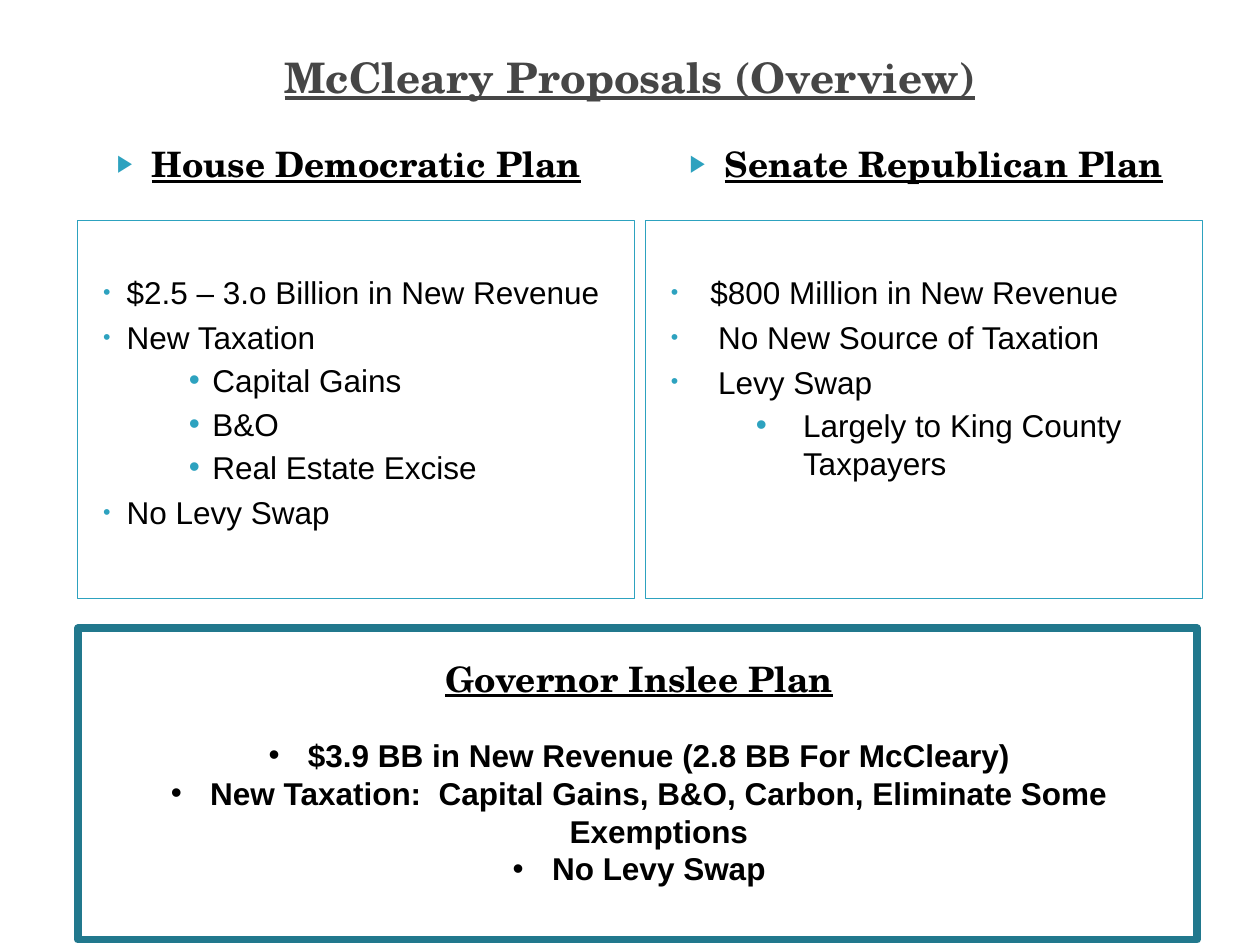
from lxml import etree
from pptx import Presentation
from pptx.dml.color import RGBColor
from pptx.enum.shapes import MSO_SHAPE
from pptx.enum.text import MSO_ANCHOR, PP_ALIGN
from pptx.oxml.ns import qn
from pptx.util import Pt

RECT = MSO_SHAPE.RECTANGLE
TOP, MIDDLE = MSO_ANCHOR.TOP, MSO_ANCHOR.MIDDLE
LEFT, CENTER = PP_ALIGN.LEFT, PP_ALIGN.CENTER

BLACK = RGBColor(0x00, 0x00, 0x00)
GRAY = RGBColor(0x46, 0x46, 0x46)
AQUA = RGBColor(0x2D, 0xA2, 0xBF)
TEAL = RGBColor(0x21, 0x78, 0x8D)
SERIF, SANS = "TeX Gyre Schola", "Arial"

# Content: list items are (text, level, left margin, hanging indent)
TITLE = "McCleary Proposals (Overview)"
PLANS = [
    ("House Democratic Plan", [
        ("$2.5 – 3.o Billion in New Revenue", 0, 13.5, 13.5),
        ("New Taxation", 0, 13.5, 13.5),
        ("Capital Gains", 1, 62.5, 13.5),
        ("B&O", 1, 62.5, 13.5),
        ("Real Estate Excise", 1, 62.5, 13.5),
        ("No Levy Swap", 0, 13.5, 13.5),
    ]),
    ("Senate Republican Plan", [
        ("$800 Million in New Revenue", 0, 22.5, 22.5),
        ("No New Source of Taxation", 0, 27, 27),
        ("Levy Swap", 0, 27, 27),
        ("Largely to King County Taxpayers", 1, 75.5, 27),
    ]),
]
GOVERNOR = "Governor Inslee Plan"
GOVERNOR_ITEMS = [
    "$3.9 BB in New Revenue (2.8 BB For McCleary)",
    "New Taxation:  Capital Gains, B&O, Carbon, Eliminate Some Exemptions",
    "No Levy Swap",
]

# Layout
HEAD_X, HEAD_PITCH = 36, 330
BOX_X, BOX_PITCH = 44.5, 324.5
COL_W = 318


def add_bullet(p, char, margin, hang, color=None, percent=100):
    pPr = p._p.get_or_add_pPr()
    pPr.set("marL", str(Pt(margin)))
    pPr.set("indent", str(-Pt(hang)))
    if color is not None:
        clr = etree.SubElement(pPr, qn("a:buClr"))
        etree.SubElement(clr, qn("a:srgbClr")).set("val", str(color))
    etree.SubElement(pPr, qn("a:buSzPct")).set("val", str(percent * 1000))
    etree.SubElement(pPr, qn("a:buFont")).set("typeface", SANS)
    etree.SubElement(pPr, qn("a:buChar")).set("char", char)


def add_text(tf, text, size=18, font=SANS, color=BLACK, bold=False,
             underline=False, align=LEFT, before=0, level=0, bullet=None):
    p = tf.paragraphs[0]
    if p.runs:
        p = tf.add_paragraph()
    p.alignment, p.level = align, level
    p.space_before = Pt(before)
    if bullet:
        add_bullet(p, **bullet)
    r = p.add_run()
    r.text = text
    f = r.font
    f.size, f.name, f.bold, f.underline = Pt(size), font, bold, underline
    f.color.rgb = color


def add_box(shapes, x, y, w, h, color, width):
    sp = shapes.add_shape(RECT, Pt(x), Pt(y), Pt(w), Pt(h))
    sp.shadow.inherit = False
    sp.fill.background()
    sp.line.color.rgb = color
    sp.line.width = Pt(width)
    return sp


def add_text_box(shapes, x, y, w, h):
    tf = shapes.add_textbox(Pt(x), Pt(y), Pt(w), Pt(h)).text_frame
    tf.word_wrap = True
    return tf


prs = Presentation()
prs.slide_width, prs.slide_height = Pt(720), Pt(540)
s = prs.slides.add_slide(prs.slide_layouts[5])
shapes = s.shapes
heading = dict(font=SERIF, bold=True, underline=True, align=CENTER)

# Title
title = shapes.title
title.left, title.top, title.width, title.height = Pt(36), Pt(21.6), Pt(648), Pt(44.6)
title.text_frame.vertical_anchor = MIDDLE
add_text(title.text_frame, TITLE, size=24, color=GRAY, **heading)

# Two legislative plans: heading above a bordered list
for col, (name, items) in enumerate(PLANS):
    tf = add_text_box(shapes, HEAD_X + col * HEAD_PITCH, 78, COL_W, 48)
    add_text(tf, name, size=20, **heading,
             bullet=dict(char="▶", margin=28.8, hang=20, color=AQUA, percent=68))

    sp = add_box(shapes, BOX_X + col * BOX_PITCH, 126, COL_W, 216, AQUA, 0.75)
    tf = sp.text_frame
    tf.word_wrap = True
    tf.vertical_anchor = TOP
    tf.margin_left, tf.margin_top = Pt(14.4), Pt(30)
    for i, (text, level, margin, hang) in enumerate(items):
        add_text(tf, text, level=level,
                 before=0 if i == 0 else 3.2 if level else 4,
                 bullet=dict(char="•", margin=margin, hang=hang, color=AQUA,
                             percent=100 if level else 68))

# Governor's plan
tf = add_text_box(shapes, 44.5, 372, 641.5, 145.5)
add_text(tf, GOVERNOR, size=20, **heading)
for i, text in enumerate(GOVERNOR_ITEMS):
    add_text(tf, text, bold=True, align=CENTER, before=0 if i else 21,
             bullet=dict(char="•", margin=22.5, hang=22.5))
add_box(shapes, 44.5, 359, 639.5, 178, TEAL, 4.33)

prs.save("out.pptx")
